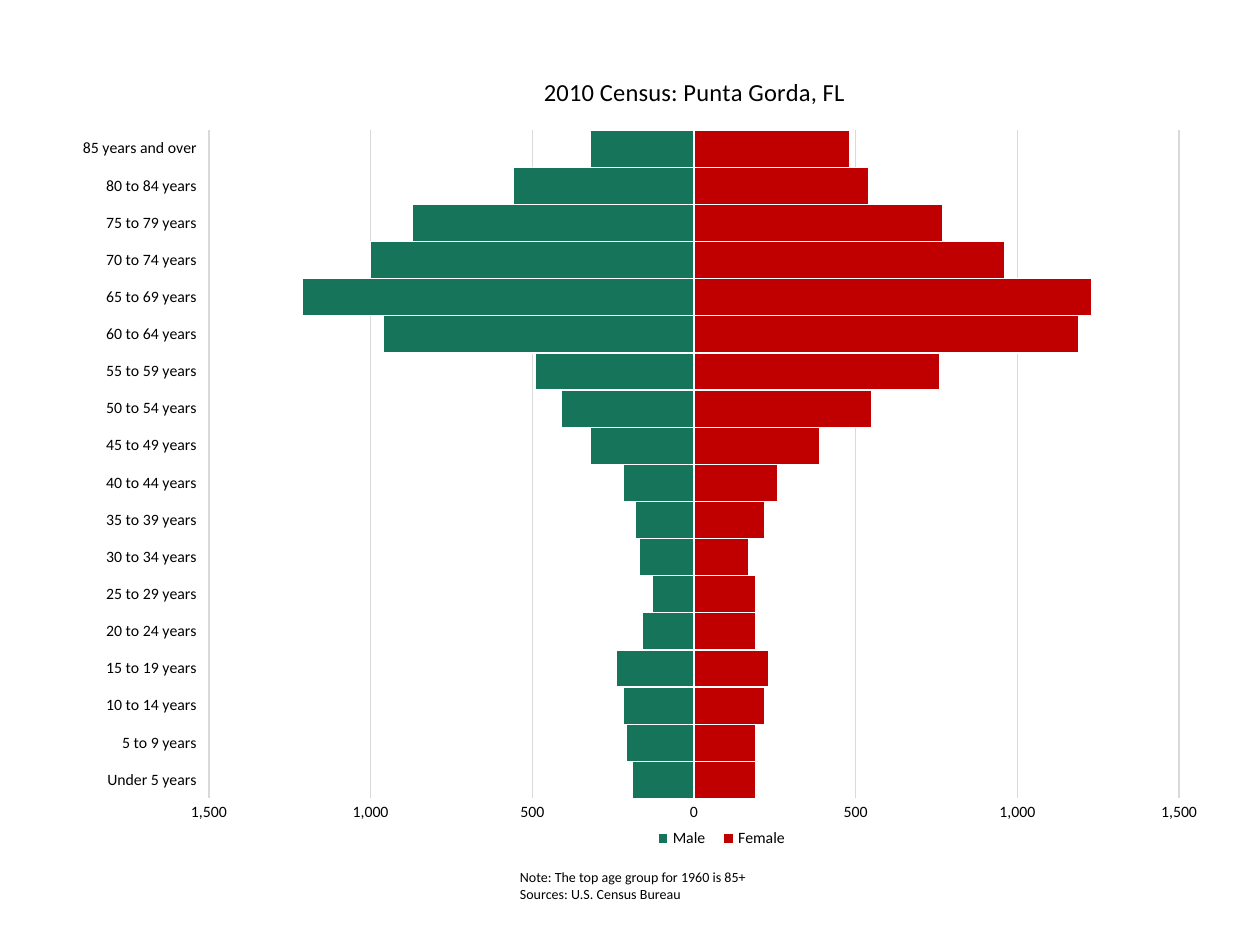
from lxml.etree import SubElement
from pptx import Presentation
from pptx.chart.data import CategoryChartData
from pptx.dml.color import RGBColor
from pptx.enum.chart import XL_CHART_TYPE, XL_LEGEND_POSITION, XL_TICK_LABEL_POSITION, XL_TICK_MARK
from pptx.oxml.ns import qn
from pptx.util import Pt

FONT = "Calibri"
BLACK, GRID, WHITE = "000000", "D9D9D9", "FFFFFF"
TITLE = "2010 Census: Punta Gorda, FL"
NOTES = ["Note: The top age group for 1960 is 85+", "Sources: U.S. Census Bureau"]
SERIES_COLORS = {"Male": "16745A", "Female": "C00000"}
# Male and female residents, youngest group first
POPULATION = [
    (190, 190), (210, 190), (220, 220), (240, 230), (160, 190), (130, 190),
    (170, 170), (180, 220), (220, 260), (320, 390), (410, 550), (490, 760),
    (960, 1190), (1210, 1230), (1000, 960), (870, 770), (560, 540), (320, 480),
]
AGE_GROUPS = (["Under 5 years"]
              + [f"{age} to {age + 4} years" for age in range(5, 85, 5)]
              + ["85 years and over"])


def color(value):
    return RGBColor.from_string(value)


def style_font(font, size):
    font.name, font.size, font.bold = FONT, Pt(size), False
    font.color.rgb = color(BLACK)


def style_line(line, value):
    line.color.rgb = color(value)
    line.width = Pt(0.75)


def place(element, index, inner=False, **fractions):
    """Give a chart part a fixed place, in fractions of the chart area."""
    for old in element.findall(qn("c:layout")):
        element.remove(old)
    layout = element.makeelement(qn("c:layout"))
    element.insert(index, layout)
    manual = SubElement(layout, qn("c:manualLayout"))
    if inner:
        SubElement(manual, qn("c:layoutTarget")).set("val", "inner")
    for name in ("x", "y"):
        SubElement(manual, qn(f"c:{name}Mode")).set("val", "edge")
    for name, fraction in fractions.items():
        SubElement(manual, qn(f"c:{name}")).set("val", str(fraction))


def add_pyramid(page):
    data = CategoryChartData()
    data.categories = AGE_GROUPS
    data.add_series("Male", [-male for male, female in POPULATION])
    data.add_series("Female", [female for male, female in POPULATION])
    chart = page.shapes.add_chart(XL_CHART_TYPE.BAR_STACKED, Pt(26), Pt(26),
                                  Pt(672), Pt(474.5), data).chart
    style_font(chart.font, 10)

    chart.has_title = True
    title = chart.chart_title.text_frame
    title.text = TITLE
    style_font(title.paragraphs[0].runs[0].font, 14)

    chart.has_legend = True
    chart.legend.position = XL_LEGEND_POSITION.BOTTOM
    chart.legend.include_in_layout = False
    style_font(chart.legend.font, 9)

    plot = chart.plots[0]
    plot.gap_width, plot.overlap, plot.vary_by_categories = 0, 100, False
    for series in plot.series:
        series.invert_if_negative = False
        series.format.fill.solid()
        series.format.fill.fore_color.rgb = color(SERIES_COLORS[series.name])
        style_line(series.format.line, WHITE)

    ages, counts = chart.category_axis, chart.value_axis
    for axis in (ages, counts):
        axis.major_tick_mark = axis.minor_tick_mark = XL_TICK_MARK.NONE
        style_font(axis.tick_labels.font, 9)
    ages.tick_label_position = XL_TICK_LABEL_POSITION.LOW
    style_line(ages.format.line, GRID)
    counts.minimum_scale, counts.maximum_scale, counts.major_unit = -1500, 1500, 500
    counts.tick_labels.number_format = "#,##0;[Black]#,##0"
    counts.tick_labels.number_format_is_linked = False
    counts.format.line.fill.background()
    counts.has_major_gridlines = True
    style_line(counts.major_gridlines.format.line, GRID)

    root = chart.element
    place(root.find(".//" + qn("c:title")), 1, x=0.42, y=0.03)
    place(root.find(".//" + qn("c:plotArea")), 0, inner=True,
          x=0.139, y=0.102, w=0.825, h=0.805)
    place(root.find(".//" + qn("c:legend")), 1, x=0.51, y=0.94, w=0.13, h=0.03)


def add_notes(page):
    frame = page.shapes.add_textbox(Pt(290), Pt(493), Pt(418.5), Pt(27)).text_frame
    frame.word_wrap = True
    frame.text = "\n".join(NOTES)
    for para in frame.paragraphs:
        style_font(para.runs[0].font, 8)


def main():
    deck = Presentation()
    deck.slide_width, deck.slide_height = Pt(720), Pt(540)
    page = deck.slides.add_slide(deck.slide_layouts[6])
    add_notes(page)
    add_pyramid(page)
    deck.save("out.pptx")


if __name__ == "__main__":
    main()
